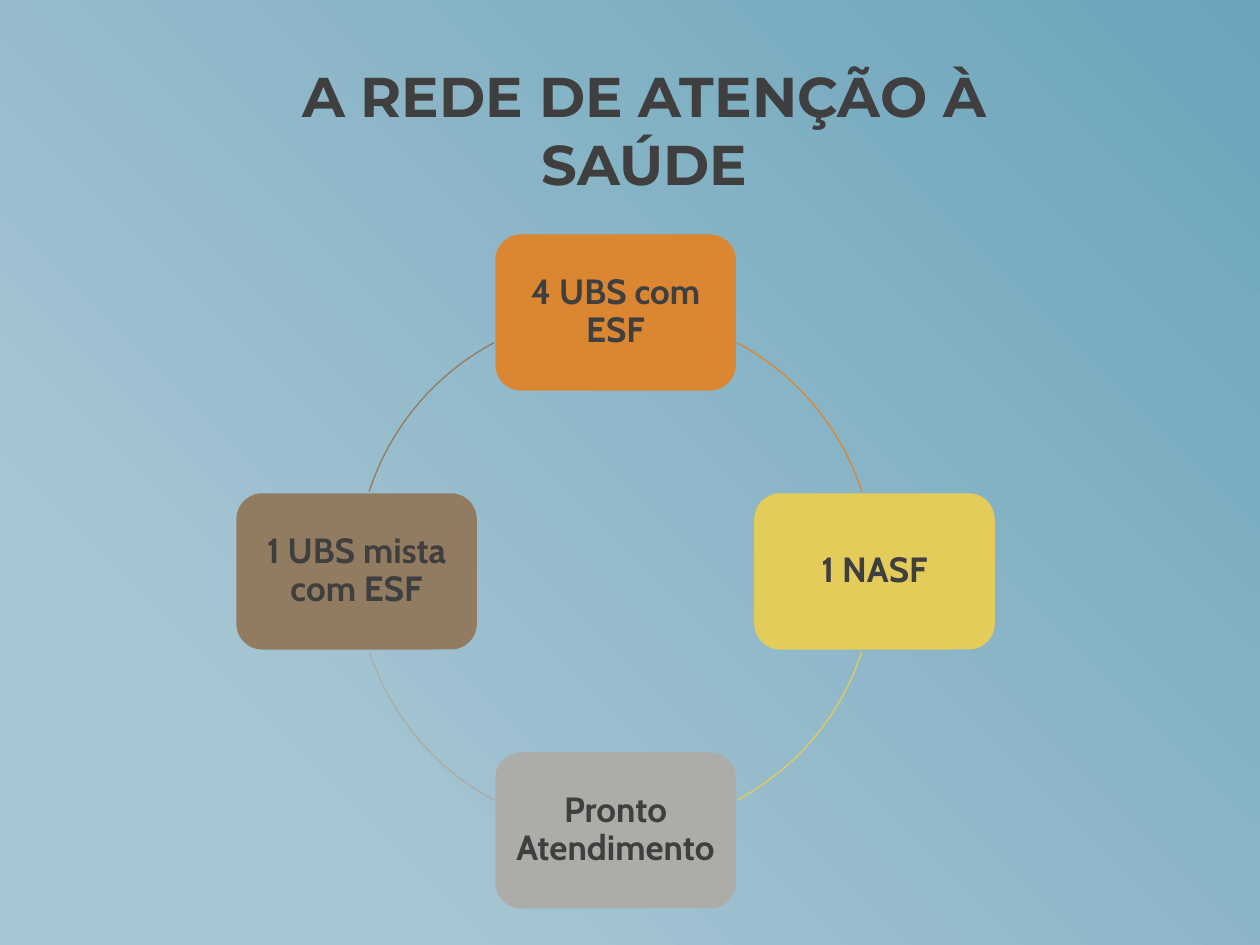
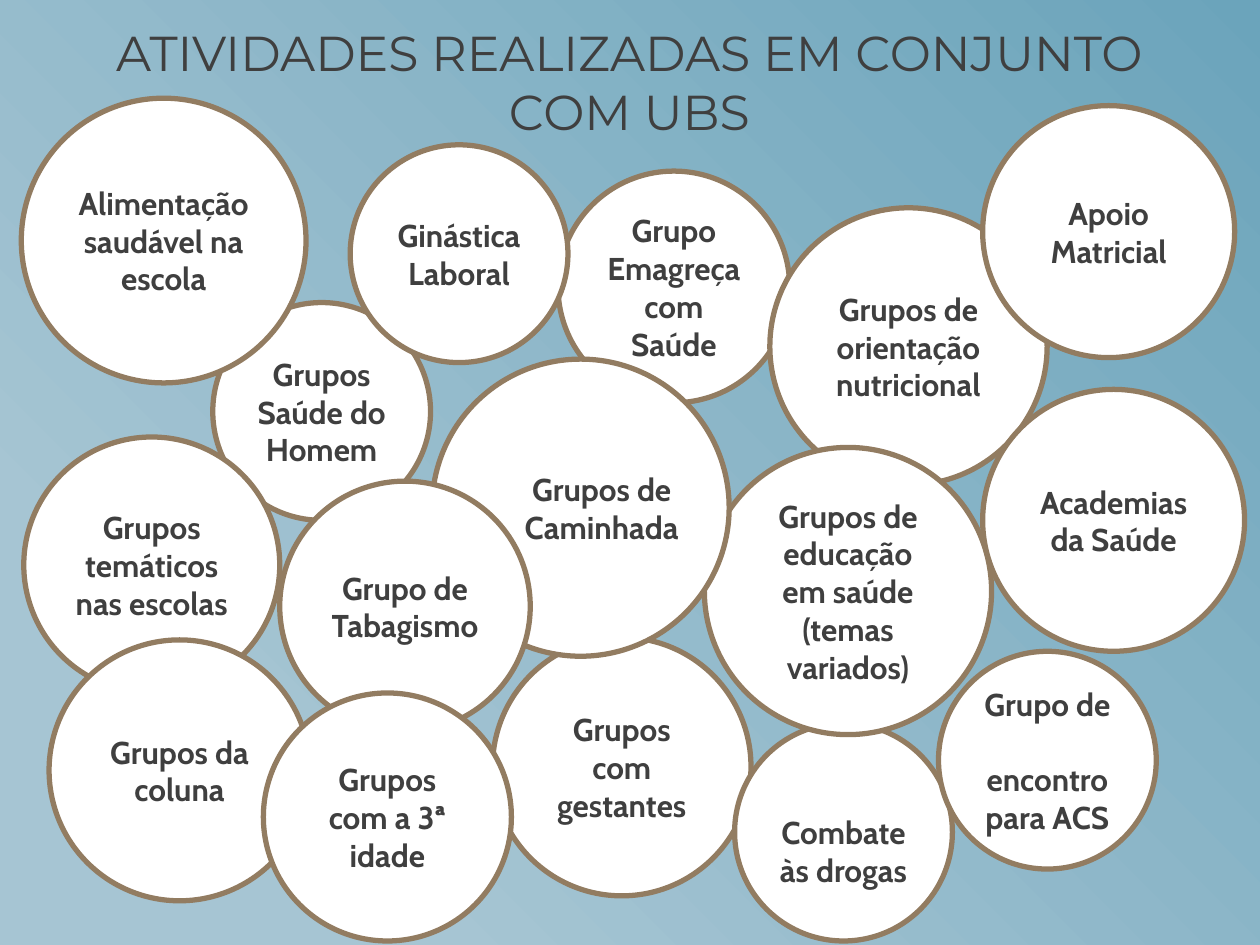
from pptx import Presentation
from pptx.dml.color import RGBColor
from pptx.enum.shapes import MSO_SHAPE
from pptx.enum.text import MSO_ANCHOR, MSO_AUTO_SIZE, PP_ALIGN
from pptx.util import Cm, Pt

ROUND, ARC, OVAL = MSO_SHAPE.ROUNDED_RECTANGLE, MSO_SHAPE.ARC, MSO_SHAPE.OVAL
CENTER, TOP, MIDDLE = PP_ALIGN.CENTER, MSO_ANCHOR.TOP, MSO_ANCHOR.MIDDLE
NO_FIT = MSO_AUTO_SIZE.NONE
TITLE_ONLY = 5

COLORS = {
    "text": "3F3F3F", "white": "FFFFFF", "bg_light": "A6C5D3", "bg_dark": "6BA4BB",
    "orange": "DB8631", "yellow": "E3CC5A", "gray": "ACADA8", "brown": "927C61",
}
TITLE_FONT, BODY_FONT = "Montserrat", "Cabin"

# Slide 1: care network; direction from the ring centre, then arc to the next node
NETWORK_TITLE = "A REDE DE ATENÇÃO À SAÚDE"
NETWORK = [  # text, colour, (x, y) direction, arc start and end in degrees
    ("4 UBS com ESF", "orange", (0, -1), (298, 342)),
    ("1 NASF", "yellow", (1, 0), (18, 62)),
    ("Pronto Atendimento", "gray", (0, 1), (118, 162)),
    ("1 UBS mista com ESF", "brown", (-1, 0), (198, 242)),
]
RING_X, RING_Y, RING_R = 12.41, 11.52, 5.22
NODE_W, NODE_H = 4.85, 3.15

# Slide 2: activities, back to front; left, top and diameter in cm
ACTIVITIES_TITLE = "ATIVIDADES REALIZADAS EM CONJUNTO COM UBS"
ACTIVITIES = [
    (["Grupos Saúde do Homem"], 4.29, 6.1, 4.39),
    (["Grupos temáticos nas escolas"], 0.48, 8.81, 5.16),
    (["Grupos com gestantes"], 9.93, 12.85, 5.21),
    (["Alimentação saudável na escola"], 0.43, 1.98, 5.74),
    (["Grupo Emagreça com Saúde"], 11.25, 3.45, 4.67),
    (["Grupos da coluna"], 0.99, 12.9, 5.26),
    (["Grupos de orientação nutricional"], 15.52, 4.19, 5.59),
    (["Combate às drogas"], 14.81, 14.58, 4.39),
    (["Grupos de educação em saúde (temas variados)"], 14.2, 9.02, 5.79),
    (["Ginástica Laboral"], 7.06, 2.92, 4.39),
    (["Grupos de Caminhada"], 8.71, 7.24, 5.99),
    (["Academias da Saúde"], 19.81, 7.85, 5.28),
    (["Grupo de", "encontro", "para ACS"], 18.92, 13.13, 4.39),
    (["Apoio Matricial"], 19.81, 2.13, 5.08),
    (["Grupo de Tabagismo"], 5.64, 9.7, 5.05),
    (["Grupos com a 3ª idade"], 5.31, 13.97, 5),
]
LINE_GAP = 21.6  # one text line, in points
LOWERED, SPACED = "Combate às drogas", "encontro"
SHIFTED = "Grupos de Caminhada"  # label kept clear of the circle in front


def rgb(name):
    return RGBColor.from_string(COLORS[name])


def write(tf, paragraphs, size, font, bold=True, anchor=MIDDLE):
    tf.word_wrap, tf.auto_size, tf.vertical_anchor = True, NO_FIT, anchor
    for i, text in enumerate(paragraphs):
        p = tf.paragraphs[0] if i == 0 else tf.add_paragraph()
        p.alignment = CENTER
        r = p.add_run()
        r.text = text
        r.font.name, r.font.size, r.font.bold = font, Pt(size), bold
        r.font.color.rgb = rgb("text")


def add_slide(prs, title, box, size, bold):
    s = prs.slides.add_slide(prs.slide_layouts[TITLE_ONLY])
    sp = s.shapes.title
    sp.left, sp.top, sp.width, sp.height = (Cm(v) for v in box)
    write(sp.text_frame, [title], size, TITLE_FONT, bold, TOP)
    return s


def add_shape(s, kind, left, top, width, height, fill=None, line=None, weight=0.75):
    sp = s.shapes.add_shape(kind, Cm(left), Cm(top), Cm(width), Cm(height))
    sp.shadow.inherit = False
    if fill:
        sp.fill.solid()
        sp.fill.fore_color.rgb = rgb(fill)
    else:
        sp.fill.background()
    if line:
        sp.line.color.rgb = rgb(line)
        sp.line.width = Pt(weight)
    else:
        sp.line.fill.background()
    return sp


def set_background(prs):
    fill = prs.slide_master.background.fill
    fill.gradient()
    fill.gradient_angle = 45
    for stop, position, color in zip(fill.gradient_stops, (0.2, 1), ("bg_light", "bg_dark")):
        stop.position = position
        stop.color.rgb = rgb(color)


def build_network(prs):
    s = add_slide(prs, NETWORK_TITLE, (4.29, 1.12, 17.4, 2.21), 32, True)
    for text, color, (dx, dy), angles in NETWORK:
        left = RING_X + dx * RING_R - NODE_W / 2
        top = RING_Y + dy * RING_R - NODE_H / 2
        node = add_shape(s, ROUND, left, top, NODE_W, NODE_H, fill=color)
        tf = node.text_frame
        tf.margin_left = tf.margin_right = tf.margin_top = tf.margin_bottom = Cm(0.2)
        write(tf, [text], 20, BODY_FONT)
        tf.paragraphs[0].line_spacing = 0.9
        # Arc to the next node; adjustments count 60000ths of a degree per 100000
        arc = add_shape(s, ARC, RING_X - RING_R, RING_Y - RING_R,
                        2 * RING_R, 2 * RING_R, line=color)
        for i, angle in enumerate(angles):
            arc.adjustments[i] = angle * 0.6


def build_activities(prs):
    s = add_slide(prs, ACTIVITIES_TITLE, (1.09, 0.33, 23.19, 1.6), 28, False)
    for lines, left, top, size in ACTIVITIES:
        sp = add_shape(s, OVAL, left, top, size, size, "white", "brown", 3)
        tf = sp.text_frame
        write(tf, lines, 18, BODY_FONT)
        if LOWERED in lines:
            tf.margin_top += Pt(LINE_GAP)
        if SHIFTED in lines:
            tf.margin_left, tf.margin_right = Cm(0.85), Cm(0)
        if SPACED in lines:
            tf.paragraphs[lines.index(SPACED)].space_before = Pt(LINE_GAP)


def main():
    prs = Presentation()
    prs.slide_width, prs.slide_height = Cm(25.4), Cm(19.05)
    set_background(prs)
    build_network(prs)
    build_activities(prs)
    prs.save("out.pptx")


if __name__ == "__main__":
    main()
